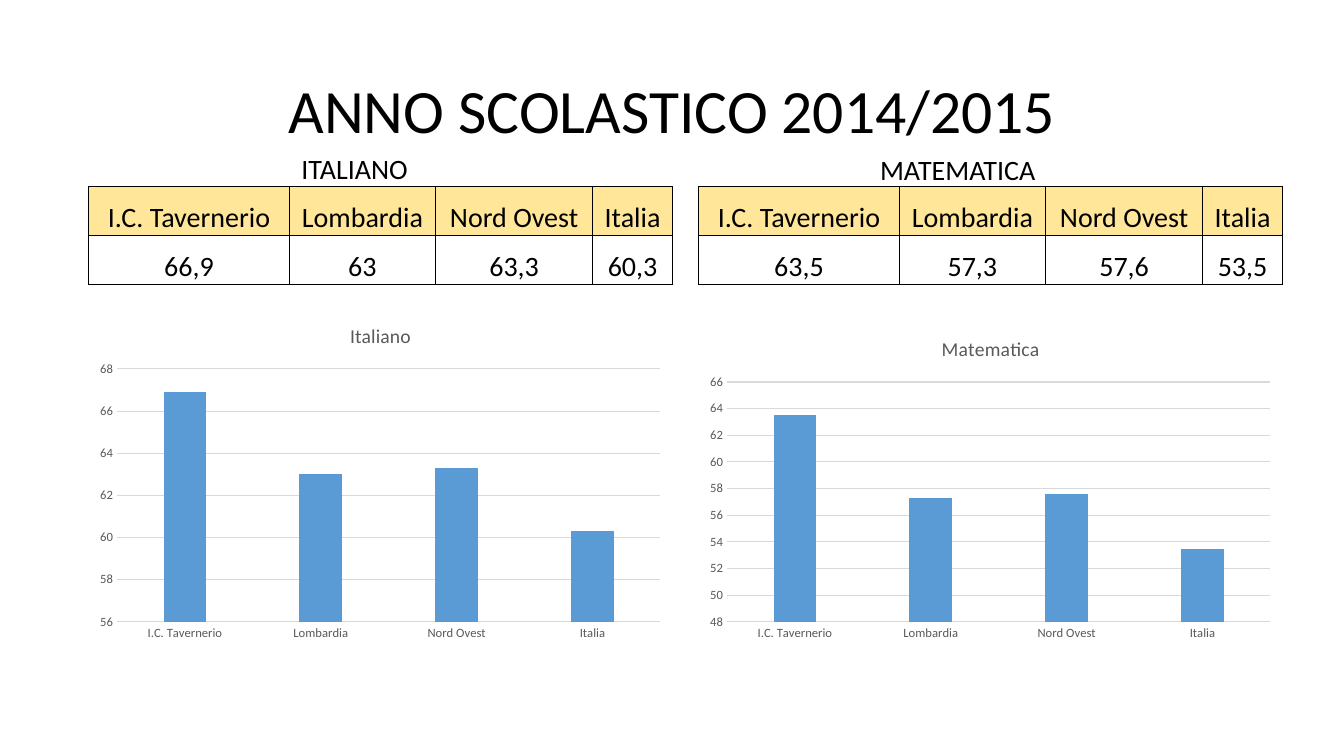
import pptx
import pptx.chart.data
import pptx.dml.color
import pptx.enum.chart
import pptx.enum.text
import pptx.oxml
import pptx.oxml.ns
import pptx.util
from dataclasses import dataclass

Inches = pptx.util.Inches
Pt = pptx.util.Pt
RGB = pptx.dml.color.RGBColor.from_string
PP_ALIGN = pptx.enum.text.PP_ALIGN
ANCHOR = pptx.enum.text.MSO_ANCHOR
NS = pptx.oxml.ns.nsdecls


@dataclass(frozen=True)
class Theme:
    font: str = "Calibri"
    text: str = "000000"
    header: str = "FFE699"
    bar: str = "5B9BD5"
    muted: str = "595959"
    grid: str = "D9D9D9"
    title_size: int = 44
    body_size: int = 20
    chart_title_size: int = 14
    axis_size: int = 9


THEME = Theme()
AREAS = ["I.C. Tavernerio", "Lombardia", "Nord Ovest", "Italia"]
COL_WIDTHS = [1.99, 1.45, 1.56, 0.79]
ROW_HEIGHT = 0.485
PANEL_WIDTH = sum(COL_WIDTHS)
PANEL_BOTTOM = 6.42


def style_font(font, size, color):
    font.name = THEME.font
    font.size = Pt(size)
    font.bold = False
    font.color.rgb = RGB(color)


def add_run(p, text, size, color=THEME.text):
    r = p.add_run()
    r.text = text
    style_font(r.font, size, color)


def add_text(s, text, box, size, align=PP_ALIGN.LEFT, anchor=ANCHOR.TOP):
    tf = s.shapes.add_textbox(*map(Inches, box)).text_frame
    tf.word_wrap = True
    tf.vertical_anchor = anchor
    p = tf.paragraphs[0]
    p.alignment = align
    add_run(p, text, size)
    return p


def fill_cell(cell, text, fill):
    cell.vertical_anchor = ANCHOR.BOTTOM
    cell.margin_left = cell.margin_right = cell.margin_top = Inches(0.01)
    cell.margin_bottom = 0
    p = cell.text_frame.paragraphs[0]
    p.alignment = PP_ALIGN.CENTER
    add_run(p, text, THEME.body_size)
    # Borders come before the fill in the cell properties
    tc_pr = cell._tc.get_or_add_tcPr()
    for side in ("lnL", "lnR", "lnT", "lnB"):
        tc_pr.append(pptx.oxml.parse_xml(
            f'<a:{side} {NS("a")} w="12700"><a:solidFill>'
            f'<a:srgbClr val="{THEME.text}"/></a:solidFill></a:{side}>'))
    if fill:
        cell.fill.solid()
        cell.fill.fore_color.rgb = RGB(fill)
    else:
        cell.fill.background()


def add_scores(s, left, top, values):
    rows = [AREAS, [f"{v:g}".replace(".", ",") for v in values]]
    table = s.shapes.add_table(
        len(rows), len(AREAS), Inches(left), Inches(top),
        Inches(PANEL_WIDTH), Inches(ROW_HEIGHT * len(rows))).table
    table.horz_banding = False
    for col, width in zip(table.columns, COL_WIDTHS):
        col.width = Inches(width)
    for i, texts in enumerate(rows):
        table.rows[i].height = Inches(ROW_HEIGHT)
        for j, text in enumerate(texts):
            fill_cell(table.cell(i, j), text, None if i else THEME.header)


def style_axis(axis):
    axis.major_tick_mark = pptx.enum.chart.XL_TICK_MARK.NONE
    style_font(axis.tick_labels.font, THEME.axis_size, THEME.muted)


def set_plot_area(chart, width, height):
    # Fixed insets in inches around the bars
    left, top, right, bottom = 0.28, 0.62, 0.12, 0.25
    parts = {"x": left / width, "y": top / height,
             "w": 1 - (left + right) / width, "h": 1 - (top + bottom) / height}
    tags = "".join(f'<c:{k} val="{v:.4f}"/>' for k, v in parts.items())
    plot_area = chart._chartSpace.chart.plotArea
    for old in plot_area.findall(pptx.oxml.ns.qn("c:layout")):
        plot_area.remove(old)
    plot_area.insert(0, pptx.oxml.parse_xml(
        f'<c:layout {NS("c")}><c:manualLayout><c:layoutTarget val="inner"/>'
        f'<c:xMode val="edge"/><c:yMode val="edge"/>{tags}'
        '</c:manualLayout></c:layout>'))


def add_bars(s, left, top, name, values, low, high):
    height = PANEL_BOTTOM - top
    data = pptx.chart.data.CategoryChartData()
    data.categories = AREAS
    data.add_series(name, values)
    chart = s.shapes.add_chart(
        pptx.enum.chart.XL_CHART_TYPE.COLUMN_CLUSTERED, Inches(left),
        Inches(top), Inches(PANEL_WIDTH), Inches(height), data).chart
    style_font(chart.font, 10, THEME.text)
    chart.has_legend = False
    chart.has_title = True
    add_run(chart.chart_title.text_frame.paragraphs[0], name,
            THEME.chart_title_size, THEME.muted)
    chart.chart_title.include_in_layout = False
    set_plot_area(chart, PANEL_WIDTH, height)

    plot = chart.plots[0]
    plot.gap_width, plot.overlap = 219, -27
    plot.vary_by_categories = False
    bars = plot.series[0].format.fill
    bars.solid()
    bars.fore_color.rgb = RGB(THEME.bar)

    cat, val = chart.category_axis, chart.value_axis
    style_axis(cat)
    style_axis(val)
    val.minimum_scale, val.maximum_scale, val.major_unit = low, high, 2
    val.format.line.fill.background()
    for line in (cat.format.line, val.major_gridlines.format.line):
        line.color.rgb = RGB(THEME.grid)
        line.width = Pt(0.75)


def add_subject(s, left, name, values, label_box, chart_top, scale):
    add_text(s, name.upper(), label_box, THEME.body_size)
    add_scores(s, left, 1.85, values)
    add_bars(s, left, chart_top, name, values, *scale)


def main():
    prs = pptx.Presentation()
    prs.slide_width, prs.slide_height = Inches(13.33), Inches(7.5)
    s = prs.slides.add_slide(prs.slide_layouts[6])
    # Heading
    p = add_text(s, "ANNO SCOLASTICO 2014/2015", (0.92, 0.4, 11.5, 1.45),
                 THEME.title_size, PP_ALIGN.CENTER, ANCHOR.MIDDLE)
    p.line_spacing = 0.9
    # One panel per subject
    add_subject(s, 0.88, "Italiano", [66.9, 63, 63.3, 60.3],
                (2.89, 1.45, 2.46, 0.44), 3.04, (56, 68))
    add_subject(s, 6.93, "Matematica", [63.5, 57.3, 57.6, 53.5],
                (8.63, 1.46, 2, 0.44), 3.17, (48, 66))
    prs.save("out.pptx")


if __name__ == "__main__":
    main()
